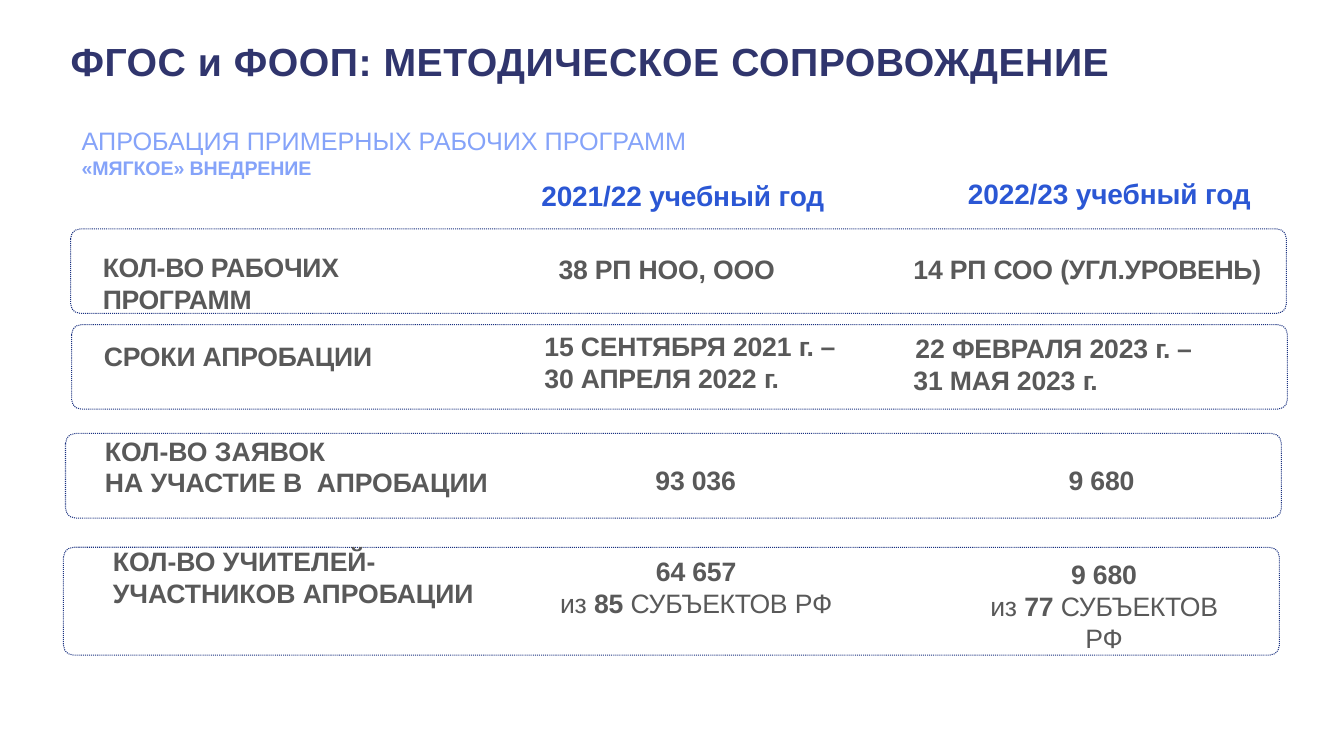
from dataclasses import dataclass

from pptx import Presentation
from pptx.dml.color import RGBColor
from pptx.enum.dml import MSO_LINE_DASH_STYLE as Dash
from pptx.enum.shapes import MSO_SHAPE as Shape
from pptx.enum.text import MSO_ANCHOR as Anchor, PP_ALIGN as Align
from pptx.slide import Slide
from pptx.util import Inches, Pt

COLORS = {"title": "30356D", "subtitle": "85A3F9", "year": "2B57D4",
          "body": "595959", "frame": "1B3281"}
FONT = "Arial"
CORNER = 0.1


@dataclass(frozen=True)
class Span:
    text: str
    bold: bool = True
    spacing: float = -0.1
    size: float | None = None


@dataclass(frozen=True)
class Line:
    spans: tuple[Span, ...]
    indent: float = 0.01
    before: float = 0.9


@dataclass(frozen=True)
class Label:
    left: float
    top: float
    width: float
    height: float
    lines: tuple[Line, ...]
    color: str = "body"
    size: float = 19
    align: Align = Align.LEFT
    anchor: Anchor = Anchor.TOP
    inset_top: float = 0.01


@dataclass(frozen=True)
class Frame:
    left: float
    top: float
    height: float = 0.84
    width: float = 12.06


def plain(text: str, spacing: float = -0.1, before: float = 0.9) -> tuple[Line, ...]:
    return (Line((Span(text, spacing=spacing),), before=before),)


def teachers(count: str, regions: str, indent: float) -> tuple[Line, ...]:
    return (Line((Span(count),), indent),
            Line((Span("из ", False), Span(f"{regions} "),
                  Span("СУБЪЕКТОВ ", False, -0.2), Span("РФ", False)), indent, 0))


FRAMES = [Frame(0.7, 2.27), Frame(0.71, 3.22), Frame(0.65, 4.3), Frame(0.63, 5.43, 1.07)]

HEADINGS = [
    Label(0.69, 0.36, 11.11, 0.48, plain("ФГОС и ФООП: МЕТОДИЧЕСКОЕ СОПРОВОЖДЕНИЕ", 0.4),
          "title", 28, anchor=Anchor.MIDDLE),
    Label(0.8, 1.18, 11.08, 0.6,
          (Line((Span("АПРОБАЦИЯ ПРИМЕРНЫХ РАБОЧИХ ПРОГРАММ\n", False, 0),
                 Span("«МЯГКОЕ» ВНЕДРЕНИЕ", size=14)), before=4.1),),
          "subtitle", 18, anchor=Anchor.MIDDLE, inset_top=0.06),
    Label(5.36, 1.76, 3.2, 0.35, plain("2021/22 учебный год", before=1.1), "year", 20),
    Label(9.59, 1.74, 3.48, 0.35, plain("2022/23 учебный год", before=1.1), "year", 20),
]

ROW_NAMES = [
    Label(1.01, 2.48, 3.57, 0.65, plain("КОЛ-ВО РАБОЧИХ ПРОГРАММ", -0.2)),
    Label(1.02, 3.36, 2.94, 0.33, plain("СРОКИ АПРОБАЦИИ")),
    Label(1.03, 4.3, 3.95, 0.65, plain("КОЛ-ВО ЗАЯВОК\nНА УЧАСТИЕ В  АПРОБАЦИИ", 0, 1)),
    Label(1.11, 5.4, 3.7, 0.65, plain("КОЛ-ВО УЧИТЕЛЕЙ- УЧАСТНИКОВ АПРОБАЦИИ", 0, 1)),
]

VALUES_2021 = [
    Label(5.53, 2.5, 2.39, 0.33, plain("38 РП НОО, ООО")),
    Label(5.39, 3.26, 3.28, 0.65,
          (Line((Span("15 СЕНТЯБРЯ 2021 "), Span("г. ", spacing=-0.5), Span("–"))),
           Line((Span("30 АПРЕЛЯ 2022 "), Span("г.", spacing=-0.5)), before=0))),
    Label(6.34, 4.59, 1.11, 0.33, plain("93 036"), align=Align.CENTER),
    Label(5.52, 5.5, 2.77, 0.65, teachers("64 657", "85", 0), align=Align.CENTER),
]

VALUES_2022 = [
    Label(9.05, 2.5, 3.58, 0.33,
          (Line((Span("14 РП СОО "), Span("(УГЛ.УРОВЕНЬ)", spacing=-0.2))),)),
    Label(9.05, 3.28, 3.94, 0.65,
          (Line((Span("22 "), Span("ФЕВРАЛЯ ", spacing=-0.2), Span("2023 "),
                 Span("г. ", spacing=-0.5), Span("–")), 0.03),
           Line((Span("31 МАЯ 2023 "), Span("г.", spacing=-0.5)), before=0.1))),
    Label(10.31, 4.59, 1.22, 0.33, plain("9 680"), align=Align.CENTER),
    Label(9.56, 5.53, 2.72, 0.65, teachers("9 680", "77", 0.06), align=Align.CENTER),
]


def draw_frame(slide: Slide, frame: Frame) -> None:
    shape = slide.shapes.add_shape(
        Shape.ROUNDED_RECTANGLE, Inches(frame.left), Inches(frame.top),
        Inches(frame.width), Inches(frame.height))
    shape.adjustments[0] = CORNER / frame.height
    shape.shadow.inherit = False
    shape.fill.background()
    shape.line.color.rgb = RGBColor.from_string(COLORS["frame"])
    shape.line.width = Pt(0.75)
    shape.line.dash_style = Dash.ROUND_DOT


def draw_label(slide: Slide, label: Label) -> None:
    text_frame = slide.shapes.add_textbox(
        Inches(label.left), Inches(label.top),
        Inches(label.width), Inches(label.height)).text_frame
    frame_format = {"word_wrap": True, "vertical_anchor": label.anchor,
                    "margin_left": 0, "margin_right": 0, "margin_bottom": 0,
                    "margin_top": Inches(label.inset_top)}
    for name, value in frame_format.items():
        setattr(text_frame, name, value)
    for index, line in enumerate(label.lines):
        paragraph = text_frame.add_paragraph() if index else text_frame.paragraphs[0]
        paragraph.alignment = label.align
        paragraph.space_before = Pt(line.before)
        paragraph._p.get_or_add_pPr().set("marL", str(Inches(line.indent)))
        for span in line.spans:
            for number, part in enumerate(span.text.split("\n")):
                if number:
                    paragraph.add_line_break()
                if not part:
                    continue
                run = paragraph.add_run()
                run.text = part
                font_format = {"name": FONT, "size": Pt(span.size or label.size),
                               "bold": span.bold}
                for name, value in font_format.items():
                    setattr(run.font, name, value)
                run.font.color.rgb = RGBColor.from_string(COLORS[label.color])
                run._r.get_or_add_rPr().set("spc", str(round(span.spacing * 100)))


def main() -> None:
    presentation = Presentation()
    presentation.slide_width = Inches(13.33)
    presentation.slide_height = Inches(7.5)
    slide = presentation.slides.add_slide(presentation.slide_layouts[6])

    # Dotted row frames
    for frame in FRAMES:
        draw_frame(slide, frame)

    # Headings, row names and the two year columns
    for label in HEADINGS + ROW_NAMES + VALUES_2021 + VALUES_2022:
        draw_label(slide, label)

    presentation.save("out.pptx")


if __name__ == "__main__":
    main()
